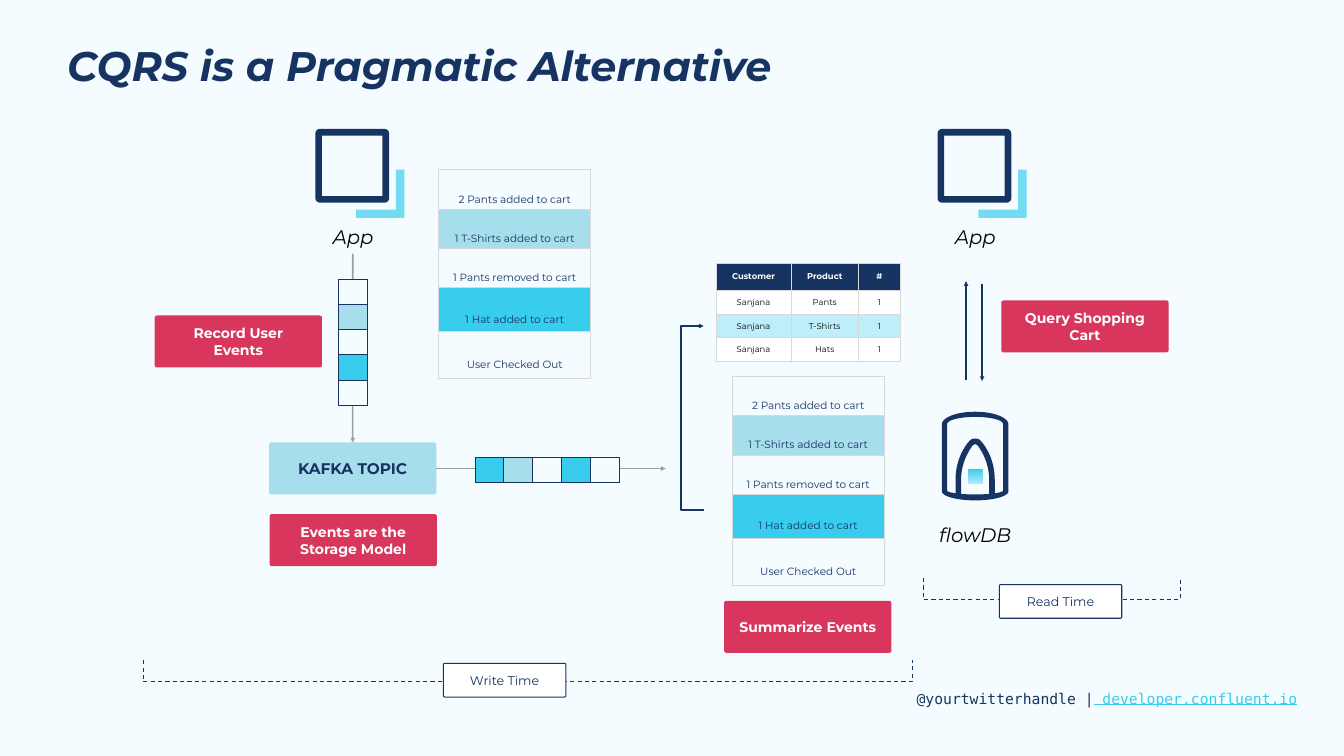
from lxml import etree
from pptx import Presentation
from pptx.dml.color import RGBColor
from pptx.enum import dml, shapes, text
from pptx.oxml import ns
from pptx.util import Cm, Pt

NAVY = RGBColor(0x17, 0x33, 0x61)
CYAN = RGBColor(0x38, 0xCC, 0xED)
PALE_CYAN = RGBColor(0xB2, 0xEB, 0xF9)
ROW_CYAN = RGBColor(0xBE, 0xEE, 0xFA)
SKY = RGBColor(0x73, 0xDB, 0xF2)
TEAL = RGBColor(0xA7, 0xDE, 0xEB)
ICE = RGBColor(0xF4, 0xFC, 0xFF)
RED = RGBColor(0xD8, 0x36, 0x5D)
GREY = RGBColor(0x9E, 0x9E, 0x9E)
BORDER = RGBColor(0xD9, 0xD9, 0xD9)
WHITE = RGBColor(0xFF, 0xFF, 0xFF)
BLACK = RGBColor(0, 0, 0)

CENTER = text.PP_ALIGN.CENTER
MIDDLE = text.MSO_ANCHOR.MIDDLE
EVENTS = [
    ("2 Pants added to cart", 1.98, None),
    ("1 T-Shirts added to cart", 1.98, TEAL),
    ("1 Pants removed to cart", 1.98, None),
    ("1 Hat added to cart", 2.21, CYAN),
    ("User Checked Out", 2.36, None),
]
CART = [
    ("Customer", "Product", "#"),
    ("Sanjana", "Pants", "1"),
    ("Sanjana", "T-Shirts", "1"),
    ("Sanjana", "Hats", "1"),
]


def write(frame, content, size, color=NAVY, font="Montserrat", bold=False,
          italic=False, underline=False, align=CENTER, spacing=None):
    paragraph = frame.paragraphs[0]
    paragraph.alignment = align
    if spacing:
        paragraph.line_spacing = spacing
    run = paragraph.add_run()
    run.text = content
    run.font.size, run.font.name = Pt(size), font
    run.font.bold, run.font.italic, run.font.underline = bold, italic, underline
    run.font.color.rgb = color


def pad(holder, left, top, right, bottom):
    holder.margin_left, holder.margin_top = Cm(left), Cm(top)
    holder.margin_right, holder.margin_bottom = Cm(right), Cm(bottom)


def paint(holder, color):
    if color is None:
        holder.fill.background()
    else:
        holder.fill.solid()
        holder.fill.fore_color.rgb = color


def add_text(slide, left, top, width, height, padding=(0.25,) * 4):
    frame = slide.shapes.add_textbox(Cm(left), Cm(top), Cm(width), Cm(height)).text_frame
    frame.word_wrap = True
    pad(frame, *padding)
    return frame


def add_label(slide, content, left, top):
    write(add_text(slide, left, top, 5.18, 1.7), content, 28, BLACK, italic=True)


def add_card(slide, content, left, top, width=8.43, height=2.62, fill=RED,
             border=None, size=20, color=WHITE, bold=True):
    card = slide.shapes.add_shape(shapes.MSO_SHAPE.ROUNDED_RECTANGLE,
                                  Cm(left), Cm(top), Cm(width), Cm(height))
    card.adjustments[0] = 0.042
    card.shadow.inherit = False
    paint(card, fill)
    if border is None:
        card.line.fill.background()
    else:
        card.line.color.rgb = border
        card.line.width = Pt(1.5)
    card.text_frame.word_wrap = True
    card.text_frame.vertical_anchor = MIDDLE
    pad(card.text_frame, 0.69, 0.69, 0.69, 0.69)
    write(card.text_frame, content, size, color, bold=bold)
    return card


def add_tag(slide, content, left, top):
    add_card(slide, content, left, top, 6.17, 1.7, WHITE, NAVY, 18, NAVY, False)


def add_arrowhead(line, end):
    head = etree.SubElement(line._get_or_add_ln(), ns.qn(f"a:{end}"))
    head.set("type", "triangle")


def add_arrow(slide, start, finish, color):
    arrow = slide.shapes.add_connector(shapes.MSO_CONNECTOR.STRAIGHT,
                                       *map(Cm, start + finish))
    arrow.line.color.rgb = color
    arrow.line.width = Pt(2.25)
    add_arrowhead(arrow.line, "tailEnd")
    etree.SubElement(arrow._element.spPr, ns.qn("a:effectLst"))
    return arrow


def add_outline(tree, *contours, fill=None, closed=True):
    points = [[(Cm(x), Cm(y)) for x, y in contour] for contour in contours]
    builder = tree.build_freeform(*points[0][0], scale=1.0)
    for number, contour in enumerate(points):
        if number:
            builder.move_to(*contour[0])
        builder.add_line_segments(contour[1:], close=closed)
    shape = builder.convert_to_shape()
    shape.shadow.inherit = False
    paint(shape, fill)
    shape.line.fill.background()
    return shape


def add_bracket(slide, points, width, dash=None):
    bracket = add_outline(slide.shapes, points, closed=False)
    bracket.line.color.rgb = NAVY
    bracket.line.width = Pt(width)
    if dash:
        bracket.line.dash_style = dash
    return bracket


def add_span(slide, left, top, right):
    bottom = top + 1.1
    add_bracket(slide, [(left, top), (left, bottom), (right, bottom), (right, top)],
                1.5, dml.MSO_LINE.DASH)


def curve(*controls, steps=10):
    points = []
    for step in range(steps + 1):
        t = step / steps
        weights = ((1 - t) ** 3, 3 * t * (1 - t) ** 2, 3 * t * t * (1 - t), t ** 3)
        points.append(tuple(sum(w * c[axis] for w, c in zip(weights, controls))
                            for axis in (0, 1)))
    return points


def mirrored(half, center):
    return ([(center + x, y) for x, y in half]
            + [(center - x, y) for x, y in reversed(half)])


def rounded(center, half_width, top, bottom, rx=0, top_ry=0, bottom_ry=0):
    w, inner, k = half_width, half_width - rx, 0.45
    half = curve((-inner, top), (-w + k * rx, top),
                 (-w, top + k * top_ry), (-w, top + top_ry))
    half += curve((-w, bottom - bottom_ry), (-w, bottom - k * bottom_ry),
                  (-w + k * rx, bottom), (-inner, bottom))
    return mirrored(half, center)


def add_app(slide, left, top):
    icon = slide.shapes.add_group_shape().shapes
    near, far, band = 2.05, 4.48, 0.42
    corner = [(far, far), (near, far), (near, far - band), (far - band, far - band),
              (far - band, near), (far, near)]
    add_outline(icon, [(left + x, top + y) for x, y in corner], fill=SKY)
    size, wall = 3.71, 0.33
    center = left + size / 2
    add_outline(icon, rounded(center, size / 2, top, top + size, 0.22, 0.22, 0.22),
                rounded(center, size / 2 - wall, top + wall, top + size - wall),
                fill=NAVY)
    add_label(slide, "App", left - 0.69, top + 4.57)


def add_database(slide, center):
    icon = slide.shapes.add_group_shape().shapes
    add_outline(icon, rounded(center, 1.68, 20.75, 25.22, 1.68, 0.64, 0.46),
                rounded(center, 1.41, 21.01, 24.92, 1.41, 0.36, 0.2), fill=NAVY)
    arch = curve((0, 22.1), (-0.13, 22.1), (-0.25, 22.15), (-0.33, 22.28))
    arch += curve((-0.38, 22.33), (-0.79, 22.86), (-0.99, 23.52), (-0.99, 24.21))
    arch += [(-0.99, 24.94), (-0.71, 24.94)]
    arch += curve((-0.71, 24.21), (-0.71, 23.57), (-0.51, 22.99), (-0.15, 22.48))
    arch += [(-0.1, 22.43), (0, 22.38)]
    add_outline(icon, mirrored(arch, center), fill=NAVY)
    core = add_outline(icon, rounded(center, 0.38, 23.62, 24.38))
    core.fill.gradient()
    core.fill.gradient_angle = 90
    for stop, color in zip(core.fill.gradient_stops, (PALE_CYAN, CYAN)):
        stop.color.rgb = color


def add_grid(slide, left, top, widths, heights, border):
    table = slide.shapes.add_table(len(heights), len(widths), Cm(left), Cm(top),
                                   Cm(sum(widths)), Cm(sum(heights))).table
    table.first_row = table.horz_banding = False
    for column, width in zip(table.columns, widths):
        column.width = Cm(width)
    for row, height in zip(table.rows, heights):
        row.height = Cm(height)
    for cell in table.iter_cells():
        pad(cell, 0, 0, 0, 0)
        cell.vertical_anchor = MIDDLE
        for side in ("lnL", "lnR", "lnT", "lnB"):
            edge = etree.SubElement(cell._tc.get_or_add_tcPr(), ns.qn(f"a:{side}"))
            edge.set("w", str(Pt(1.5)))
            solid = etree.SubElement(edge, ns.qn("a:solidFill"))
            etree.SubElement(solid, ns.qn("a:srgbClr")).set("val", str(border))
    return table


def add_event_log(slide, left, top):
    log = add_grid(slide, left, top, (2.9, 3.5, 1.25),
                   [height for _, height, _ in EVENTS], BORDER)
    for row, (event, _, fill) in enumerate(EVENTS):
        cell = log.cell(row, 0)
        cell.merge(log.cell(row, 2))
        pad(cell, 0.33, 0.84, 0.33, 0.18)
        paint(cell, fill)
        write(cell.text_frame, event, 15, spacing=1.5)


def add_cart(slide, left, top):
    cart = add_grid(slide, left, top, (3.78, 3.4, 2.11), (1.35, 1.2, 1.2, 1.2), BORDER)
    for row, (values, fill) in enumerate(zip(CART, (NAVY, WHITE, ROW_CYAN, WHITE))):
        for column, value in enumerate(values):
            cell = cart.cell(row, column)
            pad(cell, 0.69, 0.33, 0.69, 0.33)
            paint(cell, fill)
            write(cell.text_frame, value, 12, BLACK if row else WHITE, bold=row == 0)


def add_stream(slide, left, top, widths, heights, fills):
    stream = add_grid(slide, left, top, widths, heights, NAVY)
    for cell, fill in zip(stream.iter_cells(), fills):
        paint(cell, fill)


def main():
    deck = Presentation()
    deck.slide_width, deck.slide_height = Cm(67.74), Cm(38.1)
    slide = deck.slides.add_slide(deck.slide_layouts[6])
    paint(slide.background, ICE)

    title = add_text(slide, 3.38, 1.96, 57.6, 3.15, (0, 0.33, 0.69, 0.33))
    write(title, "CQRS is a Pragmatic Alternative", 59, bold=True, italic=True,
          align=text.PP_ALIGN.LEFT, spacing=0.9)
    footer = add_text(slide, 45.95, 34.49, 19.89, 1.42)
    mono = {"font": "DejaVu Sans Mono", "align": text.PP_ALIGN.LEFT}
    write(footer, "@yourtwitterhandle |", 21, **mono)
    write(footer, " developer.confluent.io", 21, CYAN, underline=True, **mono)

    topic = add_card(slide, "KAFKA TOPIC", 13.56, 22.3, fill=TEAL, size=22, color=NAVY)
    add_arrow(slide, (17.78, 12.78), (17.78, 22.3), GREY).end_connect(topic, 0)
    add_arrow(slide, (21.99, 23.61), (33.55, 23.61), GREY).begin_connect(topic, 3)
    add_stream(slide, 17.07, 14.07, [1.45], [1.27] * 5, (ICE, TEAL, ICE, CYAN, ICE))
    add_stream(slide, 23.95, 23.06, [1.45] * 5, [1.25], (CYAN, TEAL, ICE, CYAN, ICE))

    for left in (15.9, 47.26):
        add_app(slide, left, 6.5)
    add_database(slide, 49.15)
    add_label(slide, "flowDB", 46.56, 26.11)
    add_arrow(slide, (48.69, 19.13), (48.69, 14.17), NAVY)
    add_arrow(slide, (49.5, 14.3), (49.5, 19.2), NAVY)

    add_event_log(slide, 22.12, 8.56)
    add_event_log(slide, 36.91, 18.97)
    add_cart(slide, 36.09, 13.28)
    fork = add_bracket(slide, [(35.46, 16.43), (34.32, 16.43),
                               (34.32, 25.7), (35.46, 25.7)], 2.25)
    add_arrowhead(fork.line, "headEnd")

    for content, left, top in (("Record User Events", 7.8, 15.9),
                               ("Events are the Storage Model", 13.59, 25.91),
                               ("Summarize Events", 36.5, 30.28),
                               ("Query Shopping Cart", 50.47, 15.14)):
        add_card(slide, content, left, top)
    add_span(slide, 7.21, 33.27, 45.97)
    add_span(slide, 46.56, 29.13, 59.49)
    add_tag(slide, "Write Time", 22.35, 33.43)
    add_tag(slide, "Read Time", 50.37, 29.46)
    deck.save("out.pptx")


if __name__ == "__main__":
    main()
